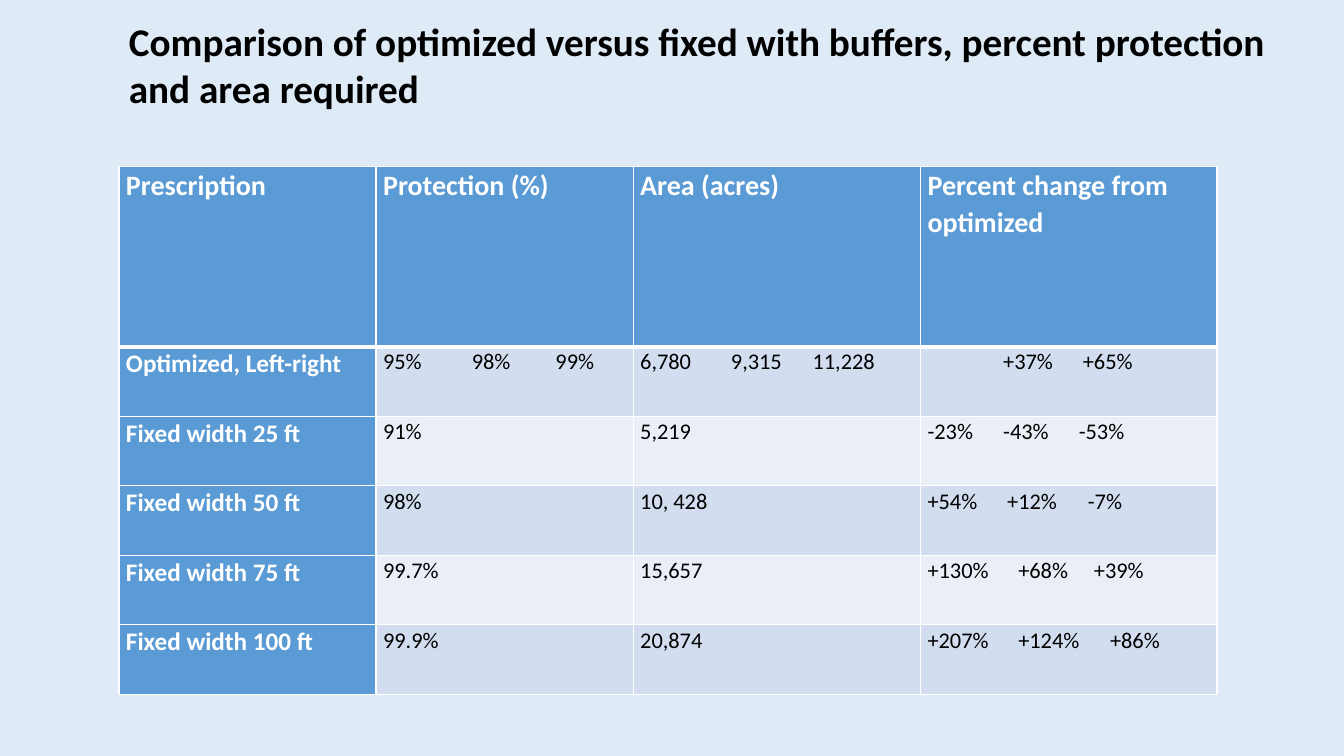
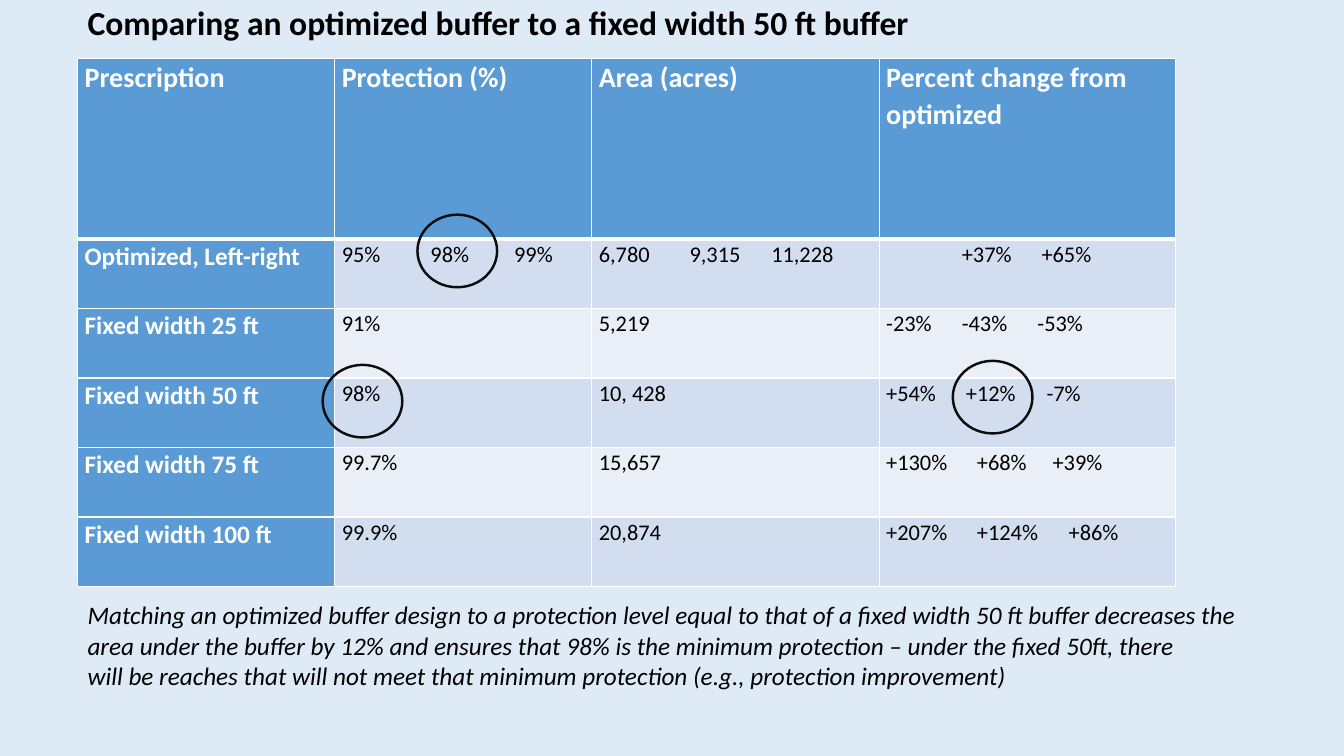
"""Build two slides that compare optimized buffers with fixed width buffers."""

from dataclasses import dataclass

from lxml import etree
from pptx import Presentation
from pptx.dml.color import RGBColor
from pptx.enum.shapes import MSO_SHAPE
from pptx.enum.text import MSO_AUTO_SIZE
from pptx.oxml.ns import qn
from pptx.util import Inches, Pt

OVAL = MSO_SHAPE.OVAL
FIT_SHAPE = MSO_AUTO_SIZE.SHAPE_TO_FIT_TEXT
BLANK_LAYOUT = 6


@dataclass(frozen=True)
class Theme:
    font: str = "Calibri"
    background: str = "DEEBF7"
    accent: str = "5B9BD5"
    bands: tuple[str, str] = ("D2DEEF", "EAEFF7")
    light: str = "FFFFFF"
    dark: str = "000000"
    ring: str = "0D0D0D"
    header_size: int = 20
    label_size: int = 18
    value_size: int = 16
    note_size: int = 18
    ring_width: float = 1.75
    border: int = 1
    header_border: int = 3


@dataclass(frozen=True)
class TextStyle:
    size: int
    color: str
    bold: bool = False
    italic: bool = False


@dataclass(frozen=True)
class Entry:
    values: tuple[str, ...]
    stops: tuple[float, ...] = ()


@dataclass(frozen=True)
class TextBlock:
    left: float
    top: float
    width: float
    height: float
    lines: tuple[str, ...]
    style: TextStyle


@dataclass(frozen=True)
class PageContent:
    table_left: float
    table_top: float
    texts: tuple[TextBlock, ...]
    rings: tuple[tuple[float, float], ...] = ()


THEME = Theme()
HEADER = TextStyle(THEME.header_size, THEME.light, bold=True)
LABEL = TextStyle(THEME.label_size, THEME.light, bold=True)
VALUE = TextStyle(THEME.value_size, THEME.dark)
NOTE = TextStyle(THEME.note_size, THEME.dark, italic=True)

COLUMN_WIDTHS = (2.55, 2.55, 2.85, 2.94)
HEADER_HEIGHT = 1.79
ROW_HEIGHT = 0.69
CELL_INSET = 0.07
LINE_SPACING = 1.07
RING_WIDTH, RING_HEIGHT = 0.79, 0.72

TABLE_ROWS = (
    (Entry(("Prescription",)), Entry(("Protection (%)",)),
     Entry(("Area (acres)",)), Entry(("Percent change from optimized",))),
    (Entry(("Optimized, Left-right",)),
     Entry(("95%", "98%", "99%"), (0.88, 1.71)),
     Entry(("6,780", "9,315", "11,228"), (0.9, 1.71)),
     Entry(("", "+37%", "+65%"), (0.75, 1.54))),
    (Entry(("Fixed width 25 ft",)), Entry(("91%",)), Entry(("5,219",)),
     Entry(("-23%", "-43%", "-53%"), (0.75, 1.5))),
    (Entry(("Fixed width 50 ft",)), Entry(("98%",)), Entry(("10, 428",)),
     Entry(("+54%", "+12%", "-7%"), (0.79, 1.59))),
    (Entry(("Fixed width 75 ft",)), Entry(("99.7%",)), Entry(("15,657",)),
     Entry(("+130%", "+68%", "+39%"), (0.9, 1.65))),
    (Entry(("Fixed width 100 ft",)), Entry(("99.9%",)), Entry(("20,874",)),
     Entry(("+207%", "+124%", "+86%"), (0.9, 1.81))),
)

PAGES = (
    PageContent(1.18, 1.65, (
        TextBlock(1.18, 0.12, 11.71, 1.04, (
            "Comparison of optimized versus fixed with buffers, percent protection",
            "and area required",
        ), TextStyle(28, THEME.dark, bold=True)),
    )),
    PageContent(0.77, 0.58, (
        TextBlock(0.77, 5.9, 11.81, 1.01, (
            "Matching an optimized buffer design to a protection level equal to that"
            " of a fixed width 50 ft buffer decreases the",
            "area under the buffer by 12% and ensures that 98% is the minimum"
            " protection – under the fixed 50ft, there",
            "will be reaches that will not meet that minimum protection"
            " (e.g., protection improvement)",
        ), NOTE),
        TextBlock(0.77, -0.03, 8.46, 0.5, (
            "Comparing an optimized buffer to a fixed width 50 ft buffer",
        ), TextStyle(24, THEME.dark, bold=True)),
    ), rings=((3.2, 3.62), (4.14, 2.13), (9.45, 3.58))),
)


def rgb(color: str) -> RGBColor:
    """Turn a hex code into a colour."""
    return RGBColor.from_string(color)


def add_span(para, text: str, style: TextStyle) -> None:
    """Add one styled run to a paragraph."""
    span = para.add_run()
    span.text = text
    span.font.name = THEME.font
    span.font.size = Pt(style.size)
    span.font.bold = style.bold
    span.font.italic = style.italic
    span.font.color.rgb = rgb(style.color)


def set_tab_stops(para, stops: tuple[float, ...]) -> None:
    """Give a paragraph left tab stops."""
    properties = para._p.get_or_add_pPr()
    tabs = etree.SubElement(properties, qn("a:tabLst"))
    for stop in stops:
        etree.SubElement(tabs, qn("a:tab"), pos=str(Inches(stop)), algn="l")


def set_borders(cell, top: int, bottom: int) -> None:
    """Draw the four borders of a cell."""
    properties = cell._tc.get_or_add_tcPr()
    widths = {"L": THEME.border, "R": THEME.border, "T": top, "B": bottom}
    for position, (side, width) in enumerate(widths.items()):
        line = etree.Element(qn(f"a:ln{side}"), w=str(Pt(width)))
        fill = etree.SubElement(line, qn("a:solidFill"))
        etree.SubElement(fill, qn("a:srgbClr"), val=THEME.light)
        properties.insert(position, line)


def fill_cell(cell, entry: Entry, row: int, column: int) -> None:
    """Write and style one table cell by its place."""
    if row == 0:
        style, color = HEADER, THEME.accent
    elif column == 0:
        style, color = LABEL, THEME.accent
    else:
        style, color = VALUE, THEME.bands[(row - 1) % 2]
    cell.margin_left = cell.margin_right = Inches(CELL_INSET)
    cell.margin_top = cell.margin_bottom = Inches(0)
    cell.fill.solid()
    cell.fill.fore_color.rgb = rgb(color)
    set_borders(
        cell,
        top=THEME.header_border if row == 1 else THEME.border,
        bottom=THEME.header_border if row == 0 else THEME.border,
    )
    para = cell.text_frame.paragraphs[0]
    para.line_spacing = LINE_SPACING
    if entry.stops:
        set_tab_stops(para, entry.stops)
    add_span(para, "\t".join(entry.values), style)


def add_buffer_table(page, left: float, top: float) -> None:
    """Add the buffer comparison table."""
    heights = (HEADER_HEIGHT,) + (ROW_HEIGHT,) * (len(TABLE_ROWS) - 1)
    table = page.shapes.add_table(
        len(heights), len(COLUMN_WIDTHS), Inches(left), Inches(top),
        Inches(sum(COLUMN_WIDTHS)), Inches(sum(heights)),
    ).table
    table.first_col = True
    for column, width in zip(table.columns, COLUMN_WIDTHS):
        column.width = Inches(width)
    for row, height in zip(table.rows, heights):
        row.height = Inches(height)
    for row_index, entries in enumerate(TABLE_ROWS):
        for column_index, entry in enumerate(entries):
            cell = table.cell(row_index, column_index)
            fill_cell(cell, entry, row_index, column_index)


def add_text(page, block: TextBlock) -> None:
    """Add a text box with one paragraph per line."""
    box = page.shapes.add_textbox(
        Inches(block.left), Inches(block.top),
        Inches(block.width), Inches(block.height),
    )
    frame = box.text_frame
    frame.word_wrap = False
    frame.auto_size = FIT_SHAPE
    for index, line in enumerate(block.lines):
        para = frame.add_paragraph() if index else frame.paragraphs[0]
        add_span(para, line, block.style)


def add_ring(page, left: float, top: float) -> None:
    """Add an unfilled ring around a figure."""
    ring = page.shapes.add_shape(
        OVAL, Inches(left), Inches(top), Inches(RING_WIDTH), Inches(RING_HEIGHT)
    )
    ring.shadow.inherit = False
    ring.fill.background()
    ring.line.color.rgb = rgb(THEME.ring)
    ring.line.width = Pt(THEME.ring_width)


def add_page(deck, content: PageContent) -> None:
    """Add one slide with its table, rings and texts."""
    page = deck.slides.add_slide(deck.slide_layouts[BLANK_LAYOUT])
    page.background.fill.solid()
    page.background.fill.fore_color.rgb = rgb(THEME.background)
    add_buffer_table(page, content.table_left, content.table_top)
    for left, top in content.rings:
        add_ring(page, left, top)
    for block in content.texts:
        add_text(page, block)


def main() -> None:
    """Build and save the deck."""
    deck = Presentation()
    deck.slide_width = Inches(13.33)
    deck.slide_height = Inches(7.5)
    for content in PAGES:
        add_page(deck, content)
    deck.save("out.pptx")


if __name__ == "__main__":
    main()
